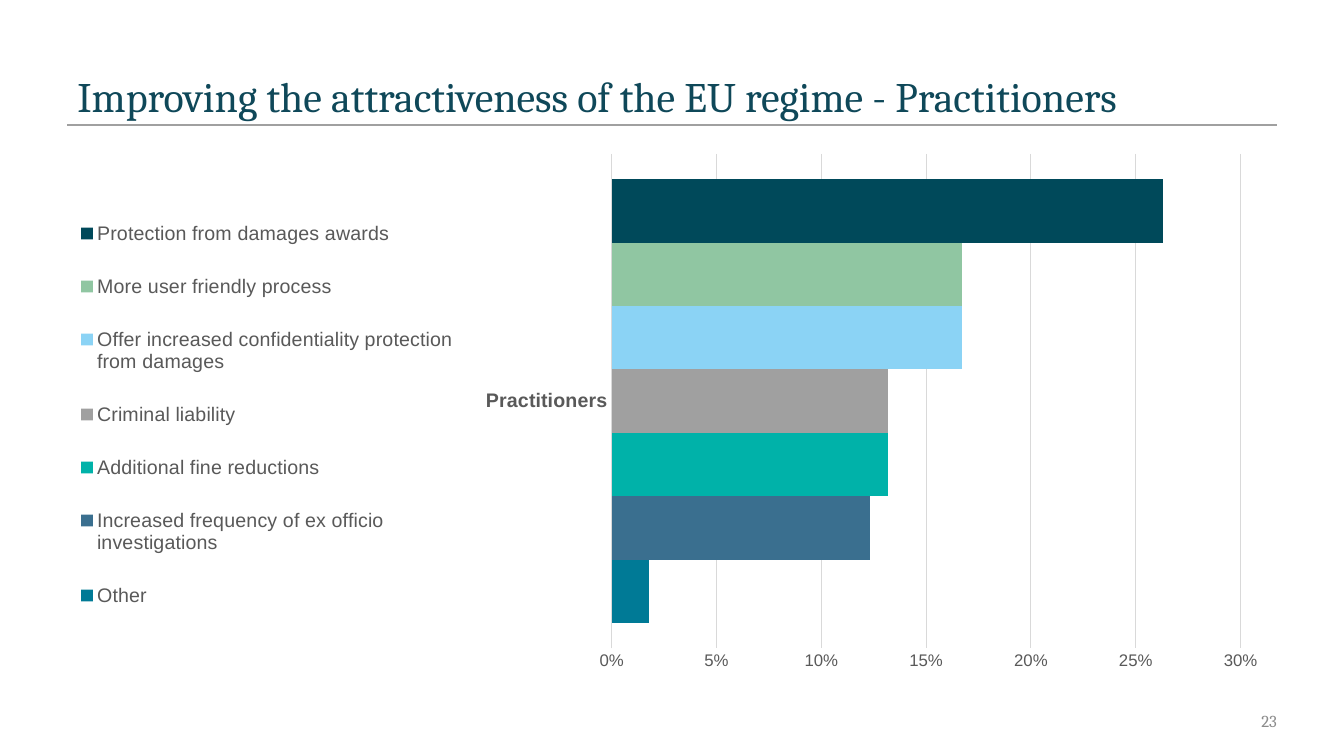
from dataclasses import dataclass

from pptx import Presentation
from pptx.chart.data import CategoryChartData
from pptx.dml.color import RGBColor
from pptx.enum.chart import XL_CHART_TYPE as ChartType
from pptx.enum.chart import XL_LEGEND_POSITION as LegendPosition
from pptx.enum.chart import XL_TICK_MARK as TickMark
from pptx.enum.shapes import MSO_CONNECTOR as Connector
from pptx.enum.text import MSO_ANCHOR as Anchor
from pptx.enum.text import PP_ALIGN as Align
from pptx.oxml import parse_xml
from pptx.oxml.ns import nsdecls
from pptx.util import Cm, Pt


@dataclass(frozen=True)
class Theme:
    heading_font: str = "Cambria"
    chart_font: str = "Arial"
    title: str = "0F4859"
    rule: str = "A0A0A0"
    page_number: str = "8C8C8C"
    label: str = "595959"
    grid: str = "D9D9D9"
    title_size: int = 30
    label_size: int = 14
    small_size: int = 12
    base_size: int = 10


THEME = Theme()
LEFT, WIDTH = 1.7, 30.48
MEASURES = [
    ("Other", 0.018, "007A96"),
    ("Increased frequency of ex officio investigations", 0.123, "3A6F8F"),
    ("Additional fine reductions", 0.132, "00B2A9"),
    ("Criminal liability", 0.132, "A0A0A0"),
    ("Offer increased confidentiality protection from damages", 0.167, "8BD3F5"),
    ("More user friendly process", 0.167, "90C6A2"),
    ("Protection from damages awards", 0.263, "00495A"),
]


def apply(target, values):
    for name, value in values.items():
        setattr(target, name, value)


def style_font(font, name, size, color, bold=False):
    apply(font, {"name": name, "size": Pt(size), "bold": bold})
    font.color.rgb = RGBColor.from_string(color)


def style_line(line, color, width):
    line.color.rgb = RGBColor.from_string(color)
    line.width = Pt(width)


def add_text(slide, box, text, size, color, frame_format, align):
    frame = slide.shapes.add_textbox(*map(Cm, box)).text_frame
    apply(frame, {"word_wrap": True, **frame_format})
    paragraph = frame.paragraphs[0]
    paragraph.text = text
    paragraph.alignment = align
    style_font(paragraph.runs[0].font, THEME.heading_font, size, color)


def add_rule(slide, top):
    ends = map(Cm, (LEFT, top, LEFT + WIDTH, top))
    rule = slide.shapes.add_connector(Connector.STRAIGHT, *ends)
    style_line(rule.line, THEME.rule, 1)
    rule._element.spPr.append(parse_xml(f"<a:effectLst {nsdecls('a')}/>"))


def place(part, position, **fractions):
    for layout in part.xpath("c:layout"):
        part.remove(layout)
    target = '<c:layoutTarget val="inner"/>' if position == 0 else ""
    modes = "".join(f'<c:{axis}Mode val="edge"/>' for axis in "xy")
    sizes = "".join(f'<c:{key} val="{value}"/>' for key, value in fractions.items())
    part.insert(position, parse_xml(
        f"<c:layout {nsdecls('c')}><c:manualLayout>{target}{modes}{sizes}"
        "</c:manualLayout></c:layout>"))


def style_axes(chart):
    hidden_ticks = {"major_tick_mark": TickMark.NONE, "minor_tick_mark": TickMark.NONE}
    groups, shares = chart.category_axis, chart.value_axis
    apply(groups, {**hidden_ticks, "has_major_gridlines": False})
    style_font(groups.tick_labels.font, THEME.chart_font, THEME.label_size, THEME.label, True)
    style_line(groups.format.line, THEME.grid, 0.75)

    apply(shares, {**hidden_ticks, "minimum_scale": 0, "maximum_scale": 0.3,
                   "major_unit": 0.05, "has_major_gridlines": True})
    apply(shares.tick_labels, {"number_format": "0%", "number_format_is_linked": False})
    style_font(shares.tick_labels.font, THEME.chart_font, THEME.small_size, THEME.label)
    shares.format.line.fill.background()
    style_line(shares.major_gridlines.format.line, THEME.grid, 0.75)


def add_measures_chart(slide):
    data = CategoryChartData(number_format="0%")
    data.categories = ["Practitioners"]
    for name, share, _ in MEASURES:
        data.add_series(name, [share])
    box = map(Cm, (LEFT, 3.61, WIDTH, 13.54))
    chart = slide.shapes.add_chart(ChartType.BAR_CLUSTERED, *box, data).chart
    apply(chart, {"has_title": False, "has_legend": True})
    style_font(chart.font, THEME.chart_font, THEME.base_size, "000000")

    bars = chart.plots[0]
    apply(bars, {"gap_width": 80, "overlap": 0, "vary_by_categories": False})
    for series, (_, _, color) in zip(bars.series, MEASURES):
        series.format.fill.solid()
        series.format.fill.fore_color.rgb = RGBColor.from_string(color)

    style_axes(chart)
    apply(chart.legend, {"position": LegendPosition.LEFT, "include_in_layout": False})
    style_font(chart.legend.font, THEME.chart_font, THEME.label_size, THEME.label)
    place(chart.element.xpath(".//c:plotArea")[0], 0, x=0.45, y=0.02, w=0.52, h=0.92)
    place(chart.element.xpath(".//c:legend")[0], 1, x=0, y=0.09, w=0.33, h=0.83)


def main():
    deck = Presentation()
    apply(deck, {"slide_width": Cm(33.87), "slide_height": Cm(19.05)})
    slide = deck.slides.add_slide(deck.slide_layouts[6])
    add_rule(slide, 3.15)
    add_text(slide, (LEFT, 1.47, WIDTH, 1.7),
             "Improving the attractiveness of the EU regime - Practitioners",
             THEME.title_size, THEME.title, {"vertical_anchor": Anchor.BOTTOM}, Align.LEFT)
    add_text(slide, (24.56, 17.65, 7.62, 1.02), "23", THEME.small_size, THEME.page_number,
             {"vertical_anchor": Anchor.MIDDLE, "margin_right": 0}, Align.RIGHT)
    add_measures_chart(slide)
    deck.save("out.pptx")


if __name__ == "__main__":
    main()
